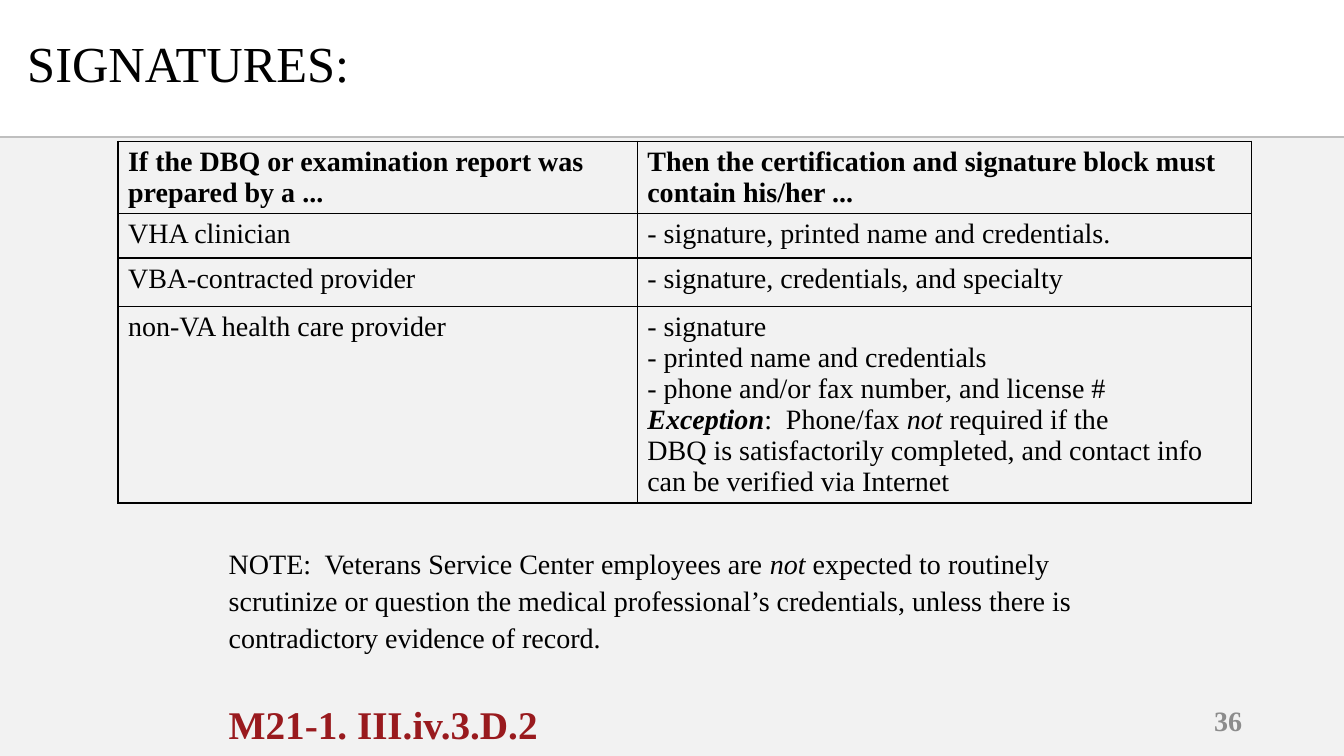
from lxml.etree import SubElement
from pptx import Presentation
from pptx.dml.color import RGBColor
from pptx.enum.shapes import MSO_CONNECTOR, MSO_SHAPE
from pptx.enum.text import MSO_ANCHOR, MSO_AUTO_SIZE, PP_ALIGN
from pptx.oxml.ns import qn
from pptx.util import Inches, Pt

FONT = "Times New Roman"
BLACK = "000000"
COLUMN_WIDTHS = [5.15, 6.09]
ROW_HEIGHTS = [0.72, 0.44, 0.48, 1.95]

# A cell is a list of paragraphs; a paragraph is a list of (text, style) runs.
EXCEPTION = [("Exception", "bi"), (":  Phone/fax ", ""), ("not", "i"), (" required if the", "")]
ROWS = [
    [[[("If the DBQ or examination report was prepared by a ...", "b")]],
     [[("Then the certification and signature block must contain his/her ...", "b")]]],
    [[[("VHA clinician", "")]],
     [[("- signature, printed name and credentials.", "")]]],
    [[[("VBA-contracted provider", "")]],
     [[("- signature, credentials, and specialty", "")]]],
    [[[("non-VA health care provider", "")]],
     [[("- signature", "")],
      [("- printed name and credentials", "")],
      [("- phone and/or fax number, and license #", "")],
      EXCEPTION,
      [("DBQ is satisfactorily completed, and contact info can be verified via Internet", "")]]],
]
NOTE = [
    ("NOTE:  Veterans Service Center employees are ", ""),
    ("not", "i"),
    (" expected to routinely scrutinize or question the medical professional’s credentials, "
     "unless there is contradictory evidence of record.", ""),
]


def color(value):
    return RGBColor.from_string(value)


def write(frame, paragraphs, size=20, fill=BLACK, align=PP_ALIGN.LEFT, spacing=1.0):
    """Fill a text frame; style letters are b for bold and i for italic."""
    for index, runs in enumerate(paragraphs):
        paragraph = frame.paragraphs[0] if index == 0 else frame.add_paragraph()
        paragraph.alignment = align
        paragraph.line_spacing = spacing
        for text, style in runs:
            run = paragraph.add_run()
            run.text = text
            run.font.name = FONT
            run.font.size = Pt(size)
            run.font.bold = "b" in style
            run.font.italic = "i" in style
            run.font.color.rgb = color(fill)


def add_text(slide, box, runs, wrap=True, anchor=MSO_ANCHOR.TOP, grow=True, **text_format):
    frame = slide.shapes.add_textbox(*map(Inches, box)).text_frame
    frame.word_wrap = wrap
    frame.vertical_anchor = anchor
    frame.auto_size = MSO_AUTO_SIZE.SHAPE_TO_FIT_TEXT if grow else MSO_AUTO_SIZE.NONE
    write(frame, [runs], **text_format)


def add_backdrop(slide):
    panel = slide.shapes.add_shape(
        MSO_SHAPE.RECTANGLE, Inches(0), Inches(1.37), Inches(13.33), Inches(6.13))
    panel.shadow.inherit = False
    panel.fill.solid()
    panel.fill.fore_color.rgb = color("F2F2F2")
    panel.line.fill.background()

    rule = slide.shapes.add_connector(
        MSO_CONNECTOR.STRAIGHT, Inches(0), Inches(1.36), Inches(13.33), Inches(1.36))
    rule.line.color.rgb = color("BFBFBF")
    rule.line.width = Pt(1.5)
    SubElement(rule.element.spPr, qn("a:effectLst"))


def set_title(slide, text):
    title = slide.shapes.title
    title.left, title.top, title.width, title.height = map(Inches, (0.17, 0.31, 10, 0.69))
    title.text_frame.vertical_anchor = MSO_ANCHOR.MIDDLE
    write(title.text_frame, [[(text, "")]], size=36, spacing=0.9)


def add_borders(cell):
    properties = cell._tc.get_or_add_tcPr()
    for index, side in enumerate(("a:lnL", "a:lnR", "a:lnT", "a:lnB")):
        line = properties.makeelement(qn(side), {"w": str(Pt(1))})
        SubElement(SubElement(line, qn("a:solidFill")), qn("a:srgbClr"), val=BLACK)
        properties.insert(index, line)


def add_signature_table(slide):
    table = slide.shapes.add_table(
        len(ROWS), len(COLUMN_WIDTHS), Inches(1.17), Inches(1.4),
        Inches(sum(COLUMN_WIDTHS)), Inches(sum(ROW_HEIGHTS))).table
    table.first_row = table.horz_banding = False
    for column, width in zip(table.columns, COLUMN_WIDTHS):
        column.width = Inches(width)
    for row, height, contents in zip(table.rows, ROW_HEIGHTS, ROWS):
        row.height = Inches(height)
        for cell, paragraphs in zip(row.cells, contents):
            cell.fill.background()
            add_borders(cell)
            write(cell.text_frame, paragraphs)


def main():
    presentation = Presentation()
    presentation.slide_width = Inches(13.33)
    presentation.slide_height = Inches(7.5)
    slide = presentation.slides.add_slide(presentation.slide_layouts[5])

    add_backdrop(slide)
    set_title(slide, "SIGNATURES:")
    add_signature_table(slide)
    add_text(slide, (2.17, 5.34, 8.91, 1.11), NOTE, spacing=1.1)
    add_text(slide, (2.17, 6.85, 3.3, 0.57), [("M21-1. III.iv.3.D.2", "b")],
             wrap=False, size=28, fill="991A1E", spacing=1.1)
    add_text(slide, (9.42, 6.95, 3, 0.4), [("36", "b")], anchor=MSO_ANCHOR.MIDDLE,
             grow=False, fill="8C8C8C", align=PP_ALIGN.RIGHT)
    presentation.save("out.pptx")


if __name__ == "__main__":
    main()
